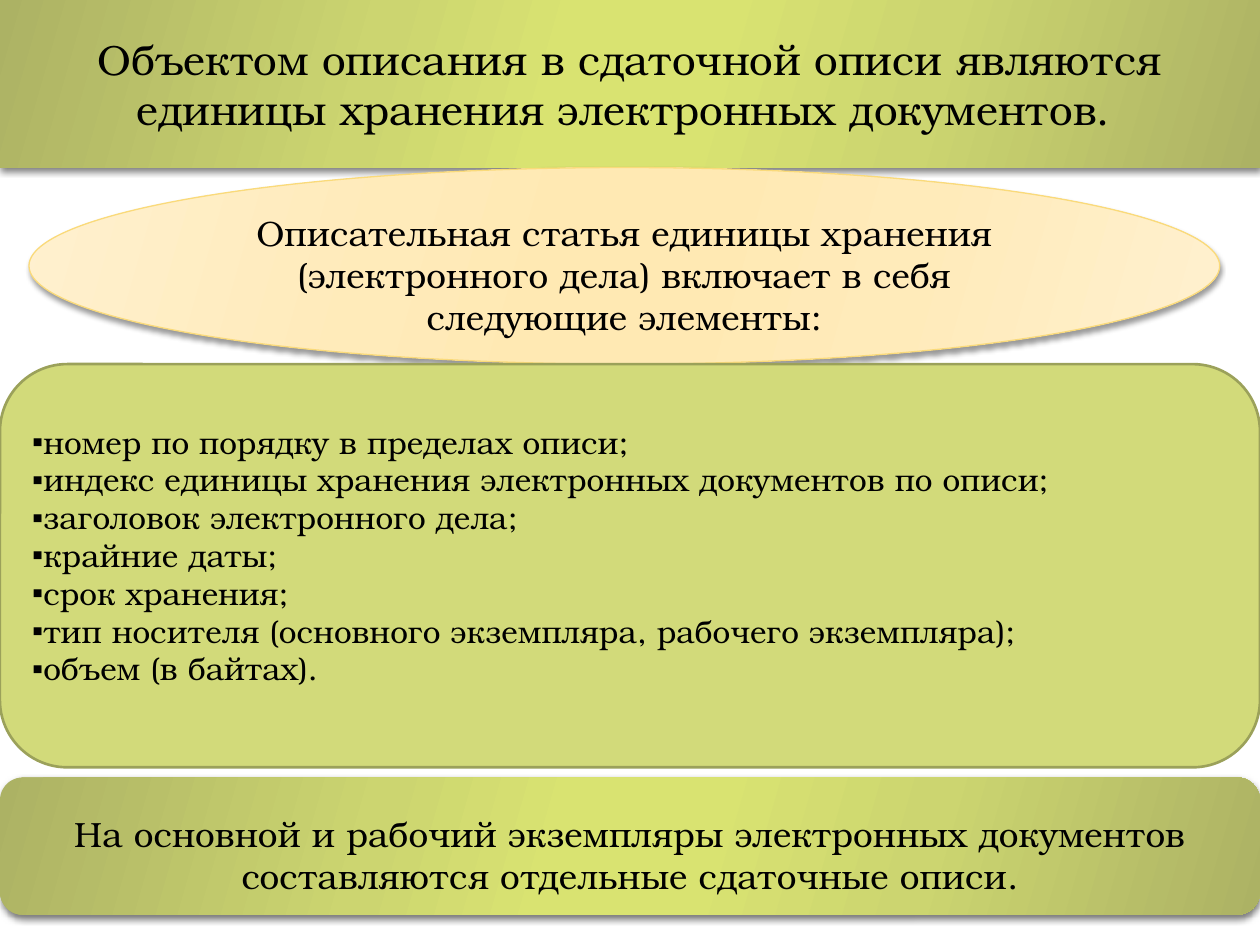
import pptx
import pptx.dml.color
import pptx.enum.shapes
import pptx.enum.text
import pptx.oxml.ns
import pptx.util
from lxml import etree
from pptx.util import Inches

FONT = "TeX Gyre Bonum"
STOPS = (0, 30, 45, 55, 73, 100)
GREEN = ("ACB264", "CCD570", "D9E371")
CREAM = ("FFF0CF", "FFEBBA", "FFE9B3")
ITEMS = (
    "номер по порядку в пределах описи;",
    "индекс единицы хранения электронных документов по описи;",
    "заголовок электронного дела;",
    "крайние даты;",
    "срок хранения;",
    "тип носителя (основного экземпляра, рабочего экземпляра);",
    "объем (в байтах).",
)


def rgb(value):
    """Return the colour for a hex string."""
    return pptx.dml.color.RGBColor.from_string(value)


def sub(parent, tag, **attrs):
    """Add a DrawingML child element with the given attributes."""
    attrs = {name: str(value) for name, value in attrs.items()}
    return etree.SubElement(parent, pptx.oxml.ns.qn(tag), attrs)


def place(sp, left, top, width, height):
    """Set the position and size of a shape in inches."""
    sp.left, sp.top = Inches(left), Inches(top)
    sp.width, sp.height = Inches(width), Inches(height)


def round_placeholder(sp, *box):
    """Place a placeholder as a rounded rectangle, in front of the rest."""
    place(sp, *box)
    geom = sub(sp._element.spPr, "a:prstGeom", prst="roundRect")
    sub(geom, "a:avLst")
    sp._element.getparent().append(sp._element)
    return sp


def add_panel(s, kind, *box):
    """Add a preset shape at a box given in inches."""
    return s.shapes.add_shape(kind, *(Inches(n) for n in box))


def fill_gradient(sp, colors):
    """Fill a shape with a symmetric slanted gradient of three colours."""
    sp.fill.gradient()
    sp.fill.gradient_angle = 344
    gs_list = sp._element.spPr.find(".//" + pptx.oxml.ns.qn("a:gsLst"))
    gs_list.clear()
    for stop, color in zip(STOPS, colors + colors[::-1]):
        gs = sub(gs_list, "a:gs", pos=stop * 1000)
        sub(gs, "a:srgbClr", val=color)


def set_line(sp, color=None, width=0.75):
    """Give a shape an outline, or none without a colour."""
    if color is None:
        sp.line.fill.background()
    else:
        sp.line.color.rgb = rgb(color)
        sp.line.width = pptx.util.Pt(width)


def set_shadow(sp, alpha=None, blur=4, dist=2):
    """Give a shape a downward shadow, or none without an alpha."""
    sp.shadow.inherit = False
    if alpha is not None:
        effects = sp._element.spPr.find(pptx.oxml.ns.qn("a:effectLst"))
        shadow = sub(effects, "a:outerShdw", blurRad=pptx.util.Pt(blur),
                     dist=pptx.util.Pt(dist), dir=90 * 60000, rotWithShape=0)
        color = sub(shadow, "a:srgbClr", val="000000")
        sub(color, "a:alpha", val=alpha * 1000)


def set_text(sp, *lines, size=20, align="CENTER", bullet=None, top=0.05, bottom=0.05):
    """Write one paragraph per line, centred vertically between the margins."""
    tf = sp.text_frame
    tf.word_wrap = True
    tf.auto_size = pptx.enum.text.MSO_AUTO_SIZE.NONE
    tf.vertical_anchor = pptx.enum.text.MSO_ANCHOR.MIDDLE
    tf.margin_top, tf.margin_bottom = Inches(top), Inches(bottom)
    for i, line in enumerate(lines):
        p = tf.add_paragraph() if i else tf.paragraphs[0]
        p.alignment = pptx.enum.text.PP_ALIGN[align]
        p.line_spacing = 1.0
        p.space_before = p.space_after = pptx.util.Pt(0)
        if bullet:
            p_pr = p._p.get_or_add_pPr()
            p_pr.set("marL", "0")
            p_pr.set("indent", "0")
            sub(p_pr, "a:buChar", char=bullet)
        r = p.add_run()
        r.text = line
        r.font.name = FONT
        r.font.size = pptx.util.Pt(size)
        r.font.color.rgb = rgb("000000")


def add_banner_style(sp):
    """Style a shape as a green banner."""
    fill_gradient(sp, GREEN)
    set_line(sp)
    set_shadow(sp, 50)


def main():
    """Build the slide and save it."""
    prs = pptx.Presentation()
    prs.slide_width, prs.slide_height = Inches(10), Inches(7.5)
    s = prs.slides.add_slide(prs.slide_layouts[1])
    shapes = pptx.enum.shapes.MSO_SHAPE

    title = round_placeholder(s.shapes.title, 0, 0, 10, 1.33)
    add_banner_style(title)
    set_text(title, "Объектом описания в сдаточной описи являются "
             "единицы хранения электронных документов. ", size=24)

    intro = add_panel(s, shapes.OVAL, 0.23, 1.33, 9.45, 1.56)
    fill_gradient(intro, CREAM)
    set_line(intro, "FADA7A")
    set_shadow(intro, 40, blur=3)
    set_text(intro, "Описательная статья единицы хранения (электронного дела) "
             "включает в себя следующие элементы:", top=0.14, bottom=0)

    body = round_placeholder(s.placeholders[1], 0, 2.89, 10, 3.2)
    body.fill.solid()
    body.fill.fore_color.rgb = rgb("D2DA7A")
    set_line(body, "9BA15A", 1.5)
    set_shadow(body)
    set_text(body, *ITEMS, size=18, align="LEFT", bullet="▪", bottom=0.22)

    footer = add_panel(s, shapes.ROUNDED_RECTANGLE, 0, 6.17, 10, 1.09)
    add_banner_style(footer)
    set_text(footer, "На основной и рабочий экземпляры электронных документов "
             "составляются отдельные сдаточные описи.", top=0.19)

    prs.save("out.pptx")


if __name__ == "__main__":
    main()
